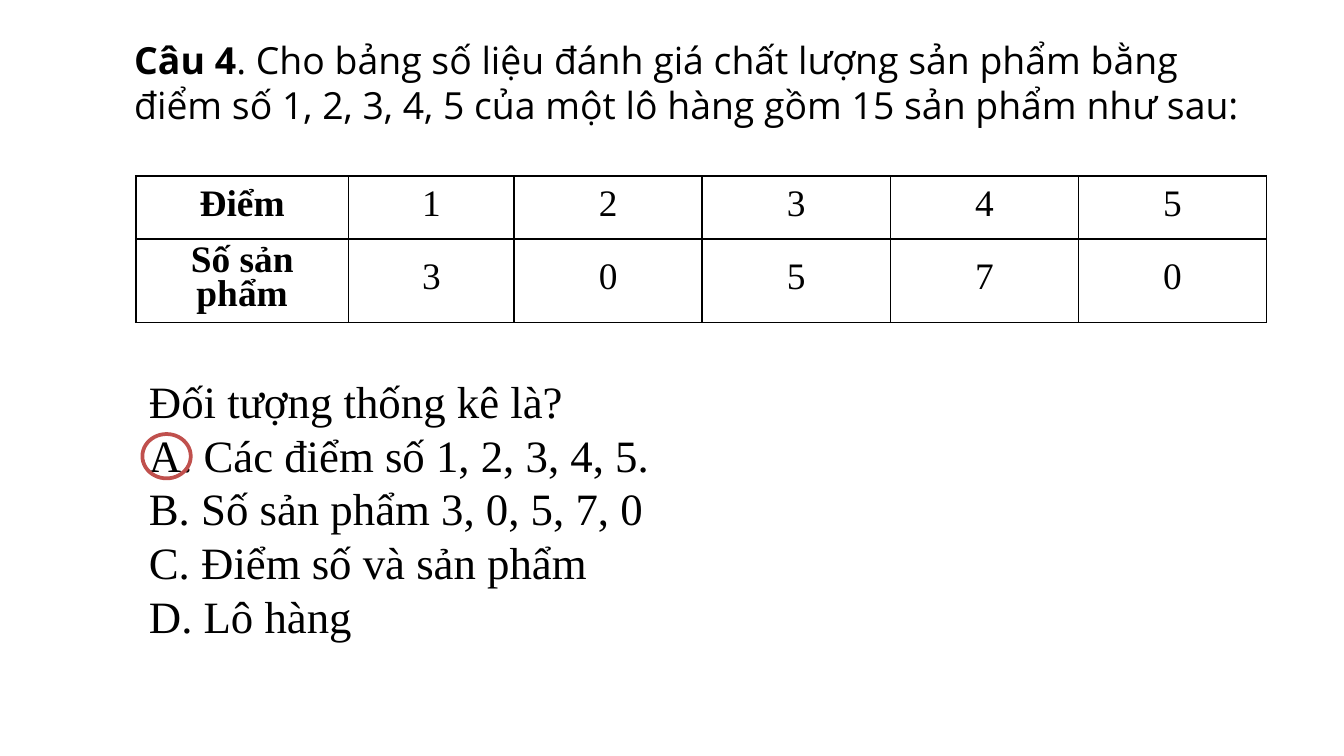
from lxml.etree import SubElement
from pptx import Presentation
from pptx.dml.color import RGBColor
from pptx.enum.shapes import MSO_SHAPE as Preset
from pptx.enum.text import MSO_ANCHOR as Anchor, PP_ALIGN as Align
from pptx.oxml.ns import qn
from pptx.util import Emu, Pt

BLACK = RGBColor(0x00, 0x00, 0x00)
RED = RGBColor(0xC0, 0x50, 0x4D)
SANS, SERIF = "Open Sans", "Times New Roman"
EMU_PER_PX = 4572

QUESTION = [
    ("Câu 4", True),
    (". Cho bảng số liệu đánh giá chất lượng sản phẩm bằng điểm số "
     "1, 2, 3, 4, 5 của một lô hàng gồm 15 sản phẩm như sau:", False),
]
SCORES = [
    ["Điểm", "1", "2", "3", "4", "5"],
    ["Số sản phẩm", "3", "0", "5", "7", "0"],
]
COLUMNS = [317, 246] + [280] * 4
ROW_HEIGHT = 94
CELL_MARGIN = 12
ANSWERS = [
    "Đối tượng thống kê là?",
    "A. Các điểm số 1, 2, 3, 4, 5.",
    "B. Số sản phẩm 3, 0, 5, 7, 0",
    "C. Điểm số và sản phẩm",
    "D. Lô hàng",
]


def px(length):
    return Emu(length * EMU_PER_PX)


def add_span(para, text, font, size, bold=False):
    span = para.add_run()
    span.text = text
    span.font.name = font
    span.font.size = Pt(size)
    span.font.bold = bold
    span.font.color.rgb = BLACK


def add_text_frame(page, left, top, width, height):
    box = page.shapes.add_textbox(px(left), px(top), px(width), px(height))
    box.text_frame.word_wrap = True
    return box.text_frame


def add_question(page, left, top, width, height):
    para = add_text_frame(page, left, top, width, height).paragraphs[0]
    for text, bold in QUESTION:
        add_span(para, text, SANS, 20, bold)


def add_borders(cell):
    properties = cell._tc.get_or_add_tcPr()
    for side in ("lnL", "lnR", "lnT", "lnB"):
        line = SubElement(properties, qn(f"a:{side}"), w=str(Pt(1)))
        fill = SubElement(line, qn("a:solidFill"))
        SubElement(fill, qn("a:srgbClr"), val=str(BLACK))


def fill_cell(cell, text, bold):
    add_borders(cell)
    cell.fill.background()
    cell.vertical_anchor = Anchor.MIDDLE
    cell.margin_left = cell.margin_right = px(CELL_MARGIN)
    cell.margin_top = cell.margin_bottom = px(CELL_MARGIN)
    para = cell.text_frame.paragraphs[0]
    para.alignment = Align.CENTER
    para.line_spacing = Pt(18)
    add_span(para, text, SERIF, 20, bold)


def add_scores(page, left, top):
    table = page.shapes.add_table(
        len(SCORES), len(COLUMNS), px(left), px(top),
        px(sum(COLUMNS)), px(ROW_HEIGHT * len(SCORES))).table
    table.first_row = table.horz_banding = False
    for column, width in zip(table.columns, COLUMNS):
        column.width = px(width)
    for row, texts in zip(table.rows, SCORES):
        row.height = px(ROW_HEIGHT)
        for index, (cell, text) in enumerate(zip(row.cells, texts)):
            fill_cell(cell, text, bold=index == 0)


def add_answers(page, left, top, width, height):
    frame = add_text_frame(page, left, top, width, height)
    for index, text in enumerate(ANSWERS):
        para = frame.add_paragraph() if index else frame.paragraphs[0]
        para.alignment = Align.JUSTIFY
        add_span(para, text, SERIF, 24)
    ring = page.shapes.add_shape(
        Preset.OVAL, px(left + 10), px(top + 100), px(72), px(66))
    ring.shadow.inherit = False
    ring.fill.background()
    ring.line.color.rgb = RED
    ring.line.width = Pt(2)


def main():
    deck = Presentation()
    deck.slide_width, deck.slide_height = px(2000), px(1125)
    page = deck.slides.add_slide(deck.slide_layouts[6])
    add_question(page, 180, 46, 1704, 154)
    add_scores(page, 202, 262)
    add_answers(page, 202, 546, 1434, 424)
    deck.save("out.pptx")


if __name__ == "__main__":
    main()
